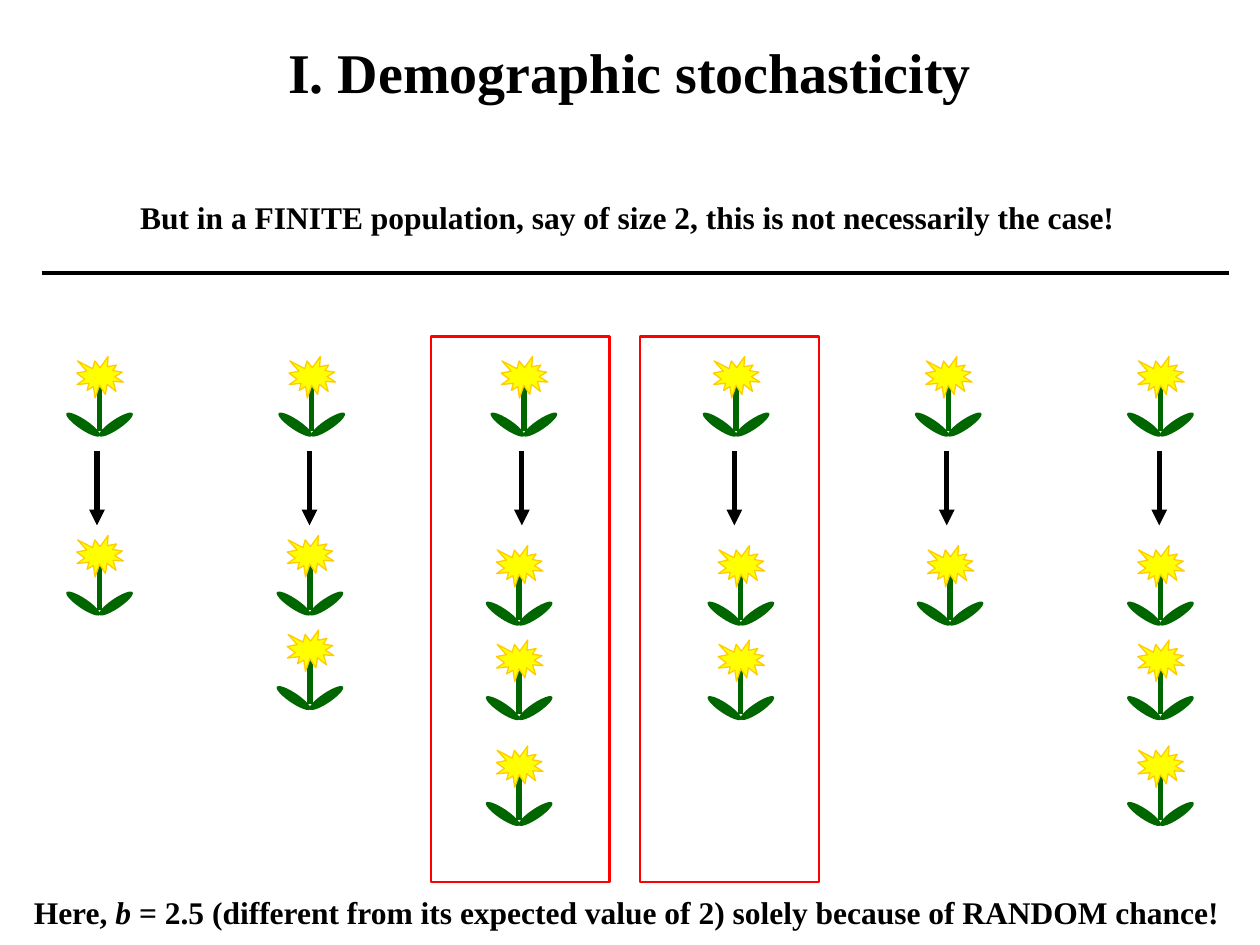
from lxml.etree import SubElement
from pptx import Presentation
from pptx.dml.color import RGBColor
from pptx.enum.shapes import MSO_CONNECTOR as CONN, MSO_SHAPE as SHAPE
from pptx.enum.text import MSO_ANCHOR as ANCHOR, PP_ALIGN as ALIGN
from pptx.oxml.ns import qn
from pptx.util import Inches, Pt

COLORS = {"text": "000000", "leaf": "006600", "petal": "FFFF00",
          "petal_edge": "FFCC00", "frame": "FF0000"}
FONT = "Times New Roman"


def color(name):
    """Return the named palette colour."""
    return RGBColor.from_string(COLORS[name])


def write(p, text, size=18, bold=True, italic=False, fill="text"):
    """Add a formatted run to a paragraph."""
    r = p.add_run()
    r.text = text
    r.font.name = FONT
    r.font.size = Pt(size)
    r.font.bold = bold
    r.font.italic = italic
    r.font.color.rgb = color(fill)


class Builder:
    """Hold the current slide and draw its elements in one style."""

    def __init__(self, prs):
        """Start a title-only slide."""
        self.slide = prs.slides.add_slide(prs.slide_layouts[5])
        self.shapes = self.slide.shapes

    def title(self, text, x, y, w, h):
        """Place the title placeholder and fill it."""
        sp = self.shapes.title
        sp.left, sp.top, sp.width, sp.height = map(Inches, (x, y, w, h))
        tf = sp.text_frame
        tf.vertical_anchor = ANCHOR.TOP
        p = tf.paragraphs[0]
        p.alignment = ALIGN.CENTER
        write(p, text, size=32)

    def text(self, runs, x, y, w, h, align=ALIGN.LEFT):
        """Add a one-line text box from (text, italic) pairs."""
        sp = self.shapes.add_textbox(*map(Inches, (x, y, w, h)))
        tf = sp.text_frame
        tf.word_wrap = False
        p = tf.paragraphs[0]
        p.alignment = align
        for text, italic in runs:
            write(p, text, italic=italic)

    def shape(self, kind, x, y, w, h, fill=None, line=None, weight=1, rotation=0, parent=None):
        """Add a preset shape to the slide or a group."""
        sp = (parent or self.shapes).add_shape(kind, *map(Inches, (x, y, w, h)))
        sp.shadow.inherit = False
        sp.rotation = rotation
        if fill:
            sp.fill.solid()
            sp.fill.fore_color.rgb = color(fill)
        else:
            sp.fill.background()
        if line:
            sp.line.color.rgb = color(line)
            sp.line.width = Pt(weight)
        else:
            sp.line.fill.background()

    def line(self, x1, y1, x2, y2, weight=3, stroke="text", arrow=False, parent=None):
        """Add a straight line, optionally with an arrowhead."""
        ends = map(Inches, (x1, y1, x2, y2))
        cx = (parent or self.shapes).add_connector(CONN.STRAIGHT, *ends)
        cx.line.color.rgb = color(stroke)
        cx.line.width = Pt(weight)
        sp_pr = cx._element.spPr
        if arrow:
            SubElement(sp_pr.find(qn("a:ln")), qn("a:tailEnd"), type="triangle")
        SubElement(sp_pr, qn("a:effectLst"))

    def flower(self, x, y):
        """Draw a grouped flower with its stem at x and its top at y."""
        g = self.shapes.add_group_shape().shapes
        for dx, angle in ((-0.17, 304), (0.09, 56)):
            self.shape(SHAPE.OVAL, x + dx, y + 0.38, 0.08, 0.32,
                       fill="leaf", rotation=angle, parent=g)
        self.line(x, y + 0.22, x, y + 0.59, stroke="leaf", parent=g)
        self.shape(SHAPE.EXPLOSION1, x - 0.18, y, 0.37, 0.33, fill="petal",
                   line="petal_edge", weight=0.75, parent=g)


def main():
    """Build the slide and save it."""
    prs = Presentation()
    prs.slide_width, prs.slide_height = Inches(10), Inches(7.5)
    b = Builder(prs)
    b.title("I. Demographic stochasticity", 0, 0.25, 10, 0.63)

    offspring = [(0.79, 4.25, 1), (2.46, 4.25, 2), (4.12, 4.33, 3),
                 (5.88, 4.33, 2), (7.54, 4.33, 1), (9.21, 4.33, 3)]
    row_offsets = (0, 0.75, 1.59)
    for i, (x, top, count) in enumerate(offspring):
        b.flower(0.79 + 8.42 / 5 * i, 2.83)
        arrow_x = 0.77 + 8.43 / 5 * i
        b.line(arrow_x, 3.58, arrow_x, 4.17, arrow=True)
        for dy in row_offsets[:count]:
            b.flower(x, top + dy)

    for x in (3.42, 5.08):
        b.shape(SHAPE.RECTANGLE, x, 2.67, 1.42, 4.33, line="frame", weight=1.5)

    b.text([("Here, ", False), ("b ", True),
            ("= 2.5 (different from its expected value of 2) solely because of RANDOM chance!",
             False)], 0.17, 7.04, 9.71, 0.4)
    b.text([("But in a FINITE population, say of size 2, this is not necessarily the case!",
             False)], 1.01, 1.52, 7.94, 0.4, align=ALIGN.CENTER)
    b.line(0.33, 2.17, 9.75, 2.17, weight=2.25)
    prs.save("out.pptx")


if __name__ == "__main__":
    main()
